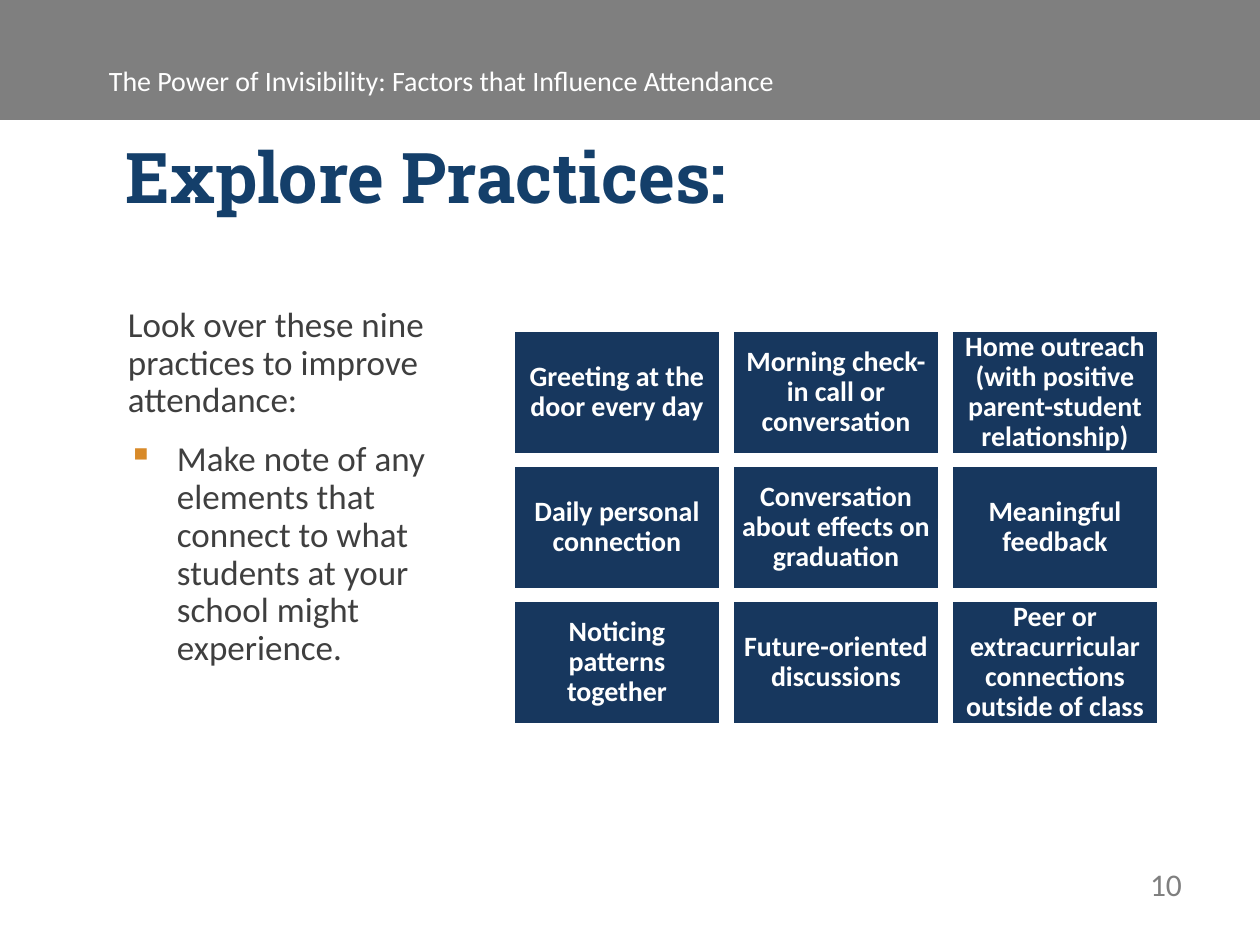
import pptx
import pptx.dml.color
import pptx.enum.shapes
import pptx.enum.text
import pptx.oxml
import pptx.oxml.ns
import pptx.util

ALIGN = pptx.enum.text.PP_ALIGN
ANCHOR = pptx.enum.text.MSO_ANCHOR


def px(count):
    """Turn whole pixels, 126 to the inch, into EMU."""
    return pptx.util.Emu(round(count * 914400 / 126))


def color(hex_value):
    """Turn a hex string into a colour."""
    return pptx.dml.color.RGBColor.from_string(hex_value)


class Deck:
    """Hold the style and the current slide."""

    BODY_FONT, TITLE_FONT = "Calibri", "Roboto Slab"
    WHITE, GRAY, NAVY = "FFFFFF", "7F7F7F", "17375E"
    TITLE_BLUE, TEXT, ORANGE = "143F6A", "3F3F3F", "D88A29"

    def __init__(self, width, height):
        """Start a presentation with one blank slide."""
        self.presentation = pptx.Presentation()
        self.presentation.slide_width = px(width)
        self.presentation.slide_height = px(height)
        blank = self.presentation.slide_layouts[6]
        self.slide = self.presentation.slides.add_slide(blank)

    def frame(self, shape, inset_x, inset_y, anchor=ANCHOR.TOP):
        """Set wrapping, insets and anchor of a shape's text."""
        frame = shape.text_frame
        frame.word_wrap = True
        frame.margin_left = frame.margin_right = px(inset_x)
        frame.margin_top = frame.margin_bottom = px(inset_y)
        frame.vertical_anchor = anchor
        return frame

    def paragraph(self, paragraph, text, size, hex_value, font=BODY_FONT, bold=False,
                  align=ALIGN.LEFT, spacing=1.0):
        """Write and style one paragraph."""
        paragraph.text = text
        paragraph.alignment = align
        paragraph.line_spacing = spacing
        paragraph.font.size = pptx.util.Pt(size)
        paragraph.font.name = font
        paragraph.font.bold = bold
        paragraph.font.color.rgb = color(hex_value)

    def indent(self, paragraph, left, hanging=0):
        """Set the left margin and hanging indent of a paragraph."""
        properties = paragraph._p.get_or_add_pPr()
        properties.set("marL", str(px(left)))
        properties.set("indent", str(-px(hanging)))
        return properties

    def bullet(self, properties, character):
        """Add a coloured bullet to paragraph properties."""
        namespace = pptx.oxml.ns.nsdecls("a")
        for element in (f'<a:buClr {namespace}><a:srgbClr val="{self.ORANGE}"/></a:buClr>',
                        f'<a:buChar {namespace} char="{character}"/>'):
            properties.append(pptx.oxml.parse_xml(element))

    def box(self, left, top, width, height, fill, outline=None):
        """Add a filled rectangle."""
        shape = self.slide.shapes.add_shape(
            pptx.enum.shapes.MSO_SHAPE.RECTANGLE, px(left), px(top), px(width), px(height))
        shape.shadow.inherit = False
        shape.fill.solid()
        shape.fill.fore_color.rgb = color(fill)
        if outline:
            shape.line.color.rgb = color(outline)
            shape.line.width = pptx.util.Pt(2)
        else:
            shape.line.fill.background()
        return shape

    def card(self, left, top, width, height, text):
        """Add a practice card."""
        card = self.box(left, top, width, height, self.NAVY, self.WHITE)
        frame = self.frame(card, 9, 9, ANCHOR.MIDDLE)
        self.paragraph(frame.paragraphs[0], text, 16, self.WHITE, bold=True,
                       align=ALIGN.CENTER, spacing=0.9)

    def text_frame(self, left, top, width, height, inset_y):
        """Add a text box and return its frame."""
        textbox = self.slide.shapes.add_textbox(px(left), px(top), px(width), px(height))
        return self.frame(textbox, 13, inset_y)

    def label(self, left, top, width, height, text, size, hex_value, inset_y=6, **style):
        """Add a text box with one paragraph."""
        frame = self.text_frame(left, top, width, height, inset_y)
        self.paragraph(frame.paragraphs[0], text, size, hex_value, **style)

    def instructions(self, left, top, width, height, intro, task):
        """Add an introduction followed by a bulleted task."""
        frame = self.text_frame(left, top, width, height, 13)
        opening, step = frame.paragraphs[0], frame.add_paragraph()
        self.indent(opening, 14)
        step.space_before = pptx.util.Pt(12)
        self.bullet(self.indent(step, 63, 49), "▪")
        for paragraph, text in ((opening, intro), (step, task)):
            self.paragraph(paragraph, text, 20, self.TEXT, spacing=0.9)


PRACTICES = [
    ["Greeting at the door every day", "Morning check-in call or conversation",
     "Home outreach (with positive parent-student relationship)"],
    ["Daily personal connection", "Conversation about effects on graduation",
     "Meaningful feedback"],
    ["Noticing patterns together", "Future-oriented discussions",
     "Peer or extracurricular connections outside of class"],
]


def main():
    """Build and save the slide."""
    deck = Deck(1260, 945)
    deck.box(0, -4, 1261, 124, deck.GRAY)
    deck.label(96, 58, 1057, 68, "The Power of Invisibility: Factors that Influence Attendance",
               16, deck.WHITE)
    deck.label(113, 121, 643, 200, "Explore Practices:", 40, deck.TITLE_BLUE, inset_y=13,
               font=deck.TITLE_FONT, bold=True)
    deck.instructions(
        101, 294, 401, 622, "Look over these nine practices to improve attendance:",
        "Make note of any elements that connect to what students at your school might experience.")
    for row, practices in enumerate(PRACTICES):
        for column, practice in enumerate(practices):
            deck.card(513 + 219 * column, 330 + 135 * row, 208, 125, practice)
    deck.label(1129, 859, 66, 50, "10", 18, deck.GRAY, align=ALIGN.RIGHT)
    deck.presentation.save("out.pptx")


if __name__ == "__main__":
    main()
